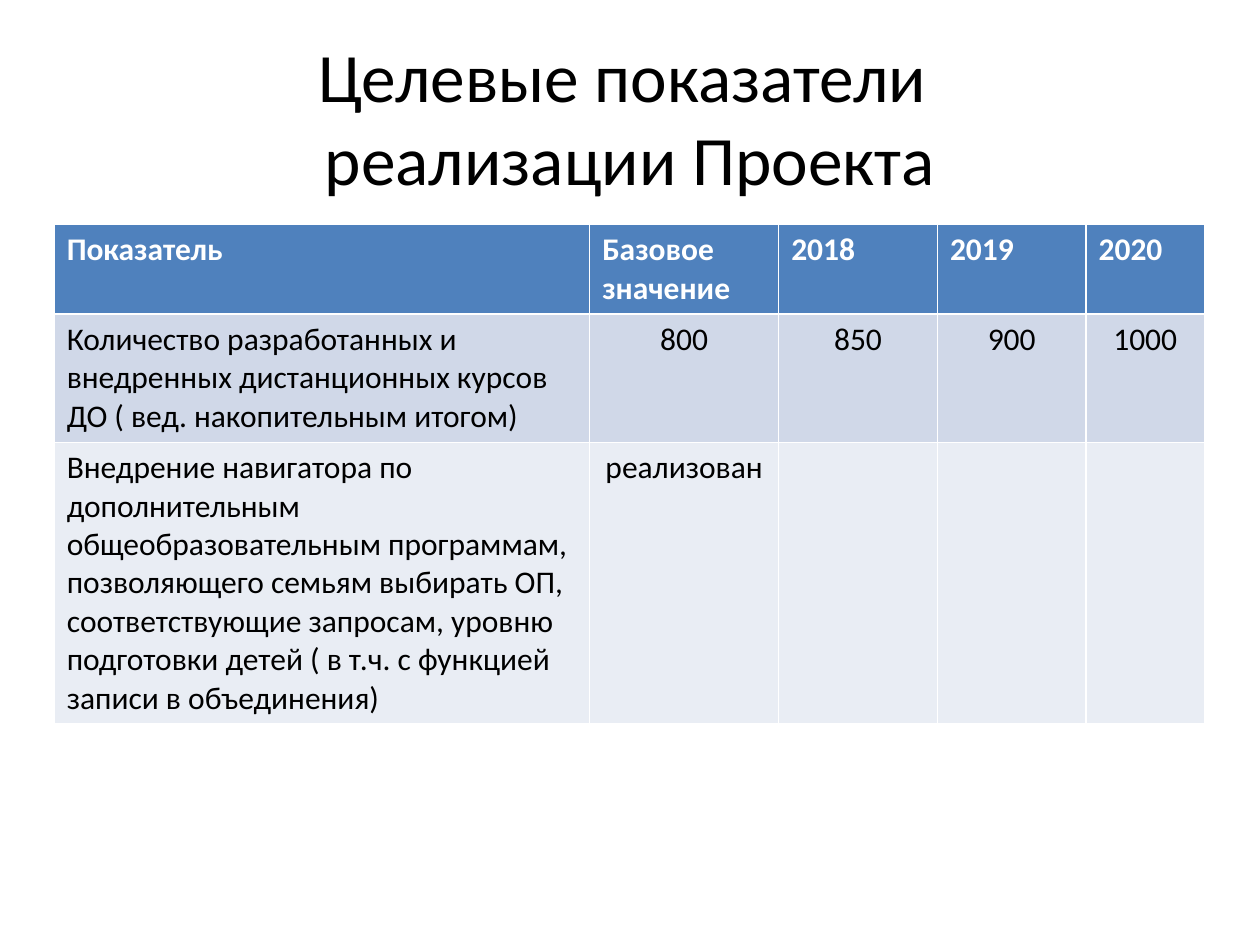
from pptx import Presentation
from pptx.dml.color import RGBColor
from pptx.enum.text import MSO_ANCHOR, PP_ALIGN
from pptx.util import Inches, Pt

LEFT = PP_ALIGN.LEFT
CENTER = PP_ALIGN.CENTER
MIDDLE = MSO_ANCHOR.MIDDLE
TITLE_ONLY_LAYOUT = 5

FONT = "Calibri"
BLACK = "000000"
WHITE = "FFFFFF"
HEADER_FILL = "4F81BD"
ROW_FILLS = [HEADER_FILL, "D0D8E8", "E9EDF4"]

COLUMN_WIDTHS = [4.25, 1.5, 1.26, 1.18, 0.94]
ROW_HEIGHTS = [0.7, 1.02, 2.23]
INDICATORS = [
    ["Показатель", "Базовое значение", "2018", "2019", "2020"],
    ["Количество разработанных и внедренных дистанционных курсов  "
     "ДО ( вед. накопительным итогом)", "800", "850", "900", "1000"],
    ["Внедрение навигатора по дополнительным общеобразовательным программам, "
     "позволяющего семьям выбирать ОП, соответствующие запросам, уровню "
     "подготовки детей ( в т.ч. с функцией записи в объединения)",
     "реализован", "", "", ""],
]


def color(value):
    return RGBColor.from_string(value)


def format_paragraph(paragraph, size, font_color, alignment, bold=False):
    paragraph.alignment = alignment
    paragraph.font.name = FONT
    paragraph.font.size = Pt(size)
    paragraph.font.bold = bold
    paragraph.font.color.rgb = color(font_color)


def add_title(slide, text):
    title = slide.shapes.title
    title.left, title.top = Inches(0.5), Inches(0.3)
    title.width, title.height = Inches(9), Inches(1.25)
    title.text_frame.text = text
    title.text_frame.vertical_anchor = MIDDLE
    format_paragraph(title.text_frame.paragraphs[0], 39.6, BLACK, CENTER)


def fill_cell(cell, text, row, column):
    is_header = row == 0
    cell.text = text
    cell.fill.solid()
    cell.fill.fore_color.rgb = color(ROW_FILLS[row])
    format_paragraph(
        cell.text_frame.paragraphs[0], 18,
        WHITE if is_header else BLACK,
        LEFT if is_header or column == 0 else CENTER,
        bold=is_header,
    )


def add_indicator_table(slide):
    table = slide.shapes.add_table(
        len(ROW_HEIGHTS), len(COLUMN_WIDTHS), Inches(0.43), Inches(1.78),
        Inches(sum(COLUMN_WIDTHS)), Inches(sum(ROW_HEIGHTS)),
    ).table
    for column, width in zip(table.columns, COLUMN_WIDTHS):
        column.width = Inches(width)
    for row, height in zip(table.rows, ROW_HEIGHTS):
        row.height = Inches(height)
    for row, texts in enumerate(INDICATORS):
        for column, text in enumerate(texts):
            fill_cell(table.cell(row, column), text, row, column)


def main():
    presentation = Presentation()
    presentation.slide_width = Inches(10)
    presentation.slide_height = Inches(7.5)
    layout = presentation.slide_layouts[TITLE_ONLY_LAYOUT]
    slide = presentation.slides.add_slide(layout)
    add_title(slide, "Целевые показатели \vреализации Проекта")
    add_indicator_table(slide)
    presentation.save("out.pptx")


if __name__ == "__main__":
    main()
